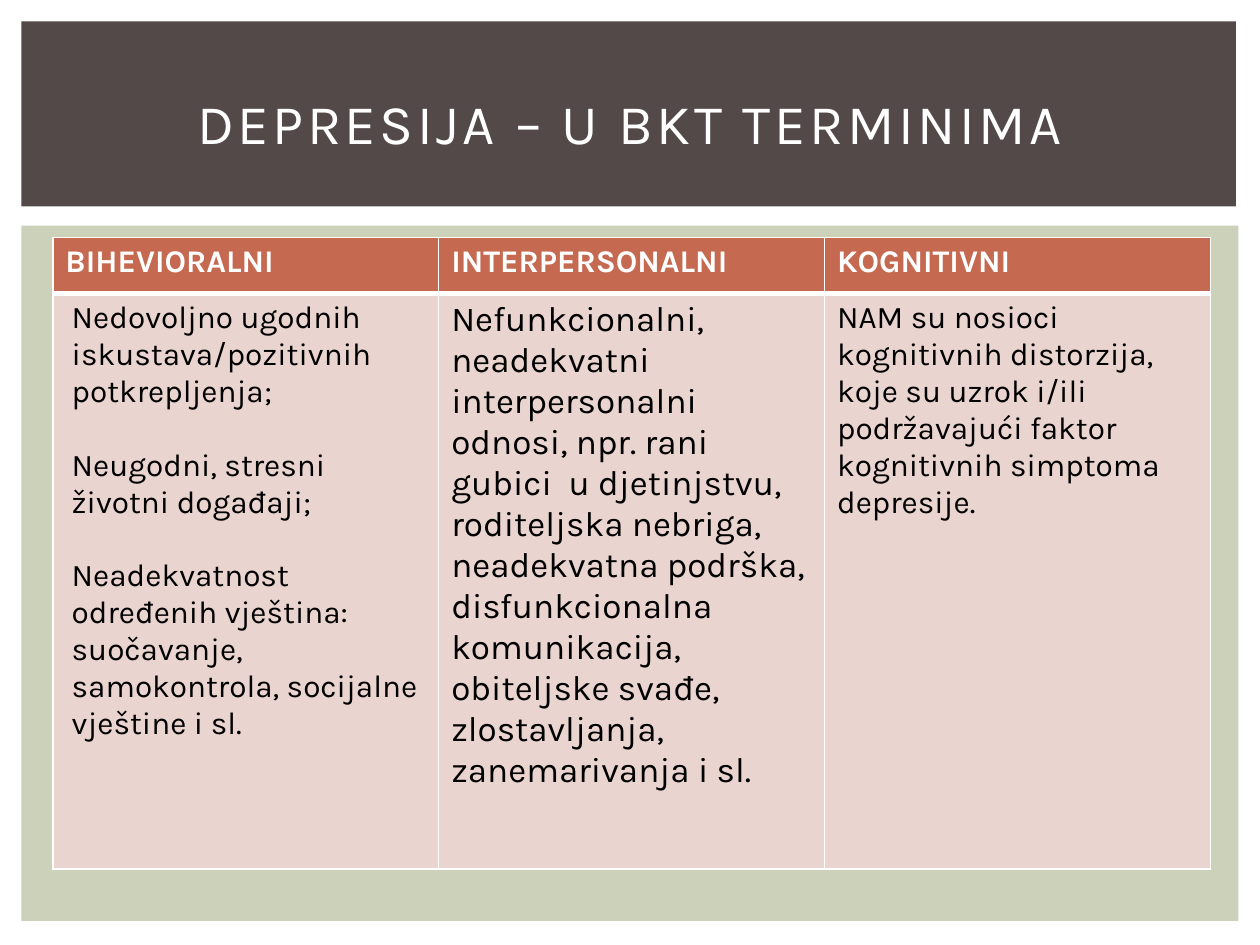
from lxml.etree import SubElement
from pptx import Presentation
from pptx.dml.color import RGBColor
from pptx.enum.shapes import MSO_SHAPE as Shape
from pptx.enum.text import MSO_ANCHOR as Anchor, PP_ALIGN as Align
from pptx.oxml.ns import qn
from pptx.util import Pt

WHITE = RGBColor(0xFF, 0xFF, 0xFF)
BLACK = RGBColor(0, 0, 0)
SAGE = RGBColor(0xCC, 0xD1, 0xB9)
BROWN = RGBColor(0x53, 0x49, 0x49)
RUST = RGBColor(0xC6, 0x69, 0x51)
PINK = RGBColor(0xEA, 0xD4, 0xD0)


def write(frame, paragraphs, size=18, color=BLACK, bold=False, align=Align.LEFT,
          gap=0, indent=0, spacing=0):
    """Fill a text frame; gap separates paragraphs, spacing separates letters."""
    for index, text in enumerate(paragraphs):
        para = frame.add_paragraph() if index else frame.paragraphs[0]
        para.alignment = align
        para.space_before = Pt(gap if index else 0)
        para._p.get_or_add_pPr().set("marL", str(Pt(indent)))
        span = para.add_run()
        span.text = text
        span.font.name = "Karla"
        span.font.size = Pt(size)
        span.font.bold = bold
        span.font.color.rgb = color
        span._r.get_or_add_rPr().set("spc", str(round(spacing * 100)))


def style_cell(cell, fill, borders):
    """Set the fill and the white borders, given as side: width in points."""
    properties = cell._tc.get_or_add_tcPr()
    for side, width in borders.items():
        line = SubElement(properties, qn(f"a:ln{side}"), w=str(Pt(width)))
        solid = SubElement(line, qn("a:solidFill"))
        SubElement(solid, qn("a:srgbClr"), val=str(WHITE))
    cell.fill.solid()
    cell.fill.fore_color.rgb = fill


deck = Presentation()
deck.slide_width, deck.slide_height = Pt(720), Pt(540)
page = deck.slides.add_slide(deck.slide_layouts[6])

# Background panels
for top, width, height, color in [(128.9, 695.5, 397.4, SAGE), (12.2, 694.1, 105.8, BROWN)]:
    panel = page.shapes.add_shape(Shape.RECTANGLE, Pt(12.2), Pt(top), Pt(width), Pt(height))
    panel.shadow.inherit = False
    panel.fill.solid()
    panel.fill.fore_color.rgb = color
    panel.line.fill.background()

# Title
title = page.shapes.add_textbox(Pt(30), Pt(28), Pt(660), Pt(83)).text_frame
title.word_wrap = True
title.vertical_anchor = Anchor.MIDDLE
write(title, ["DEPRESIJA – U BKT TERMINIMA"], size=32, color=WHITE,
      align=Align.CENTER, spacing=2)

# Table: heading, paragraphs, text format
columns = [
    ("BIHEVIORALNI",
     ["Nedovoljno ugodnih iskustava/pozitivnih potkrepljenja;",
      "Neugodni, stresni životni događaji;",
      "Neadekvatnost određenih vještina: suočavanje, samokontrola, socijalne vještine i sl."],
     {"gap": 21, "indent": 3.6}),
    ("INTERPERSONALNI",
     ["Nefunkcionalni, neadekvatni interpersonalni odnosi, npr. rani gubici  u djetinjstvu, "
      "roditeljska nebriga, neadekvatna podrška, disfunkcionalna komunikacija, "
      "obiteljske svađe, zlostavljanja, zanemarivanja i sl."],
     {"size": 20}),
    ("KOGNITIVNI",
     ["NAM su nosioci kognitivnih distorzija,",
      "koje su uzrok i/ili podržavajući faktor kognitivnih simptoma depresije."],
     {}),
]
table = page.shapes.add_table(2, len(columns), Pt(30.2), Pt(135.7), Pt(661.5), Pt(361)).table
table.rows[0].height, table.rows[1].height = Pt(32), Pt(329)
for index, (heading, paragraphs, text_format) in enumerate(columns):
    table.columns[index].width = Pt(220.5)
    head, body = table.cell(0, index), table.cell(1, index)
    style_cell(head, RUST, {"L": 1, "R": 1, "T": 1, "B": 3})
    style_cell(body, PINK, {"L": 1, "R": 1, "T": 3, "B": 1})
    write(head.text_frame, [heading], color=WHITE, bold=True)
    write(body.text_frame, paragraphs, **text_format)

deck.save("out.pptx")
